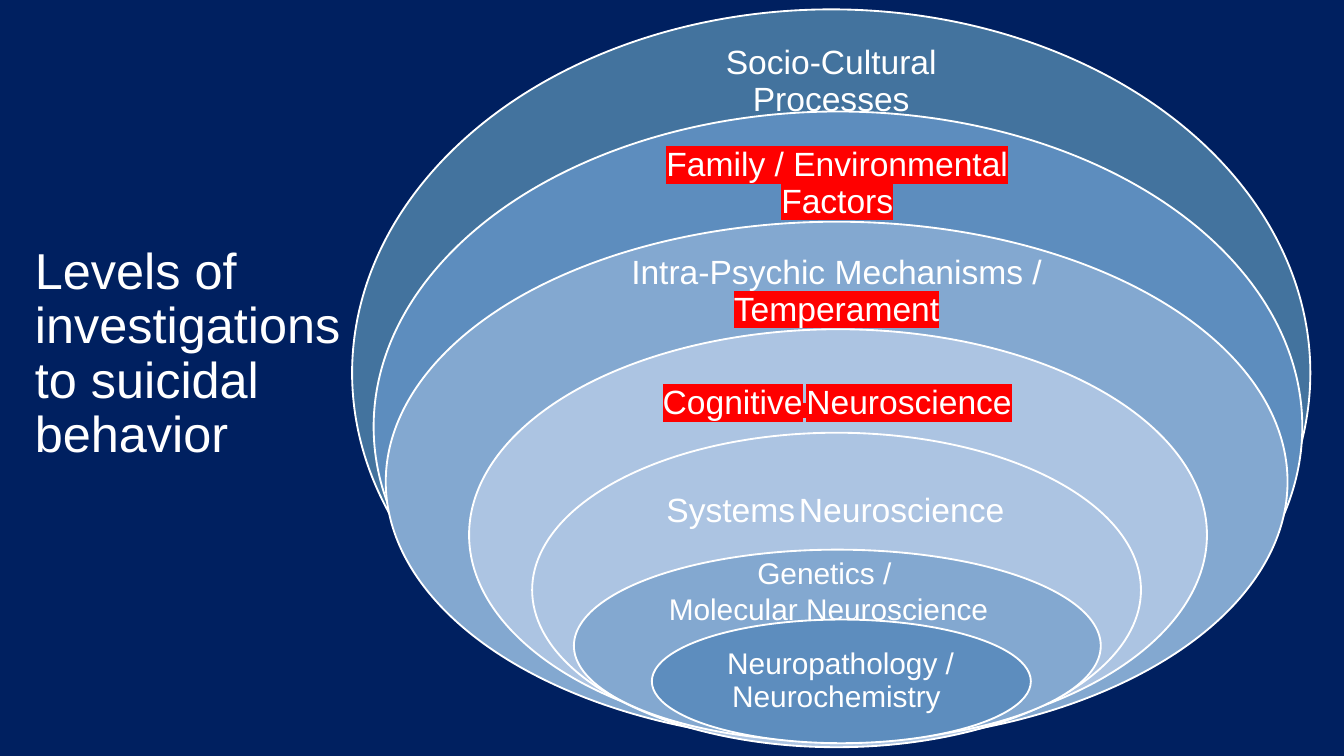
from dataclasses import dataclass

import lxml.etree
import pptx
import pptx.dml.color
import pptx.enum.shapes
import pptx.enum.text
import pptx.oxml.ns
import pptx.util

EMU_PER_PX = 4572  # 200 px to the inch
COLORS = {
    "background": "002060",
    "white": "FFFFFF",
    "highlight": "FF0000",
    "deep": "43739E",
    "strong": "5D8DBE",
    "medium": "83A8D0",
    "pale": "ACC4E2",
}
ANCHOR = pptx.enum.text.MSO_ANCHOR
ALIGN = pptx.enum.text.PP_ALIGN
Box = tuple[int, int, int, int]  # left, top, width, height


@dataclass(frozen=True)
class Span:
    text: str
    highlighted: bool = False
    size: int | None = None


@dataclass(frozen=True)
class Level:
    ellipse: Box
    color: str
    label: Box
    paragraphs: list[list[Span]]
    size: int = 18
    insets: Box = (28, 28, 28, 28)
    anchor: ANCHOR = ANCHOR.MIDDLE
    line_spacing: float = 0.9


GAP = Span(" ", size=7)
HIGHLIGHTED_GAP = Span(" ", highlighted=True, size=7)

# Levels from the outermost to the innermost
LEVELS = [
    Level((524, 14, 1426, 1082), "deep", (970, 68, 534, 108),
          [[Span("Socio-Cultural Processes")]]),
    Level((556, 166, 1382, 938), "strong", (948, 220, 596, 108),
          [[Span("Family / Environmental Factors", highlighted=True)]]),
    Level((574, 330, 1342, 774), "medium", (898, 382, 694, 106),
          [[Span("Intra-Psychic Mechanisms / "), Span("Temperament", highlighted=True)]]),
    Level((698, 490, 1098, 612), "pale", (950, 546, 592, 110),
          [[Span("Cognitive", highlighted=True), HIGHLIGHTED_GAP,
            Span("Neuroscience", highlighted=True)]]),
    Level((792, 644, 906, 468), "pale", (952, 702, 588, 118),
          [[Span("Systems"), GAP, Span("Neuroscience"), GAP]]),
    Level((854, 818, 784, 286), "medium", (978, 860, 534, 70),
          [[Span("Genetics / ")], [Span("Molecular Neuroscience")]],
          size=16, insets=(0, 0, 24, 140), anchor=ANCHOR.TOP, line_spacing=1.0),
    Level((970, 922, 564, 184), "strong", (1052, 968, 398, 92),
          [[Span("Neuropathology / Neurochemistry ")]],
          size=16, insets=(24, 24, 24, 24)),
]


def px(length: int) -> pptx.util.Emu:
    return pptx.util.Emu(length * EMU_PER_PX)


def rgb(name: str) -> pptx.dml.color.RGBColor:
    return pptx.dml.color.RGBColor.from_string(COLORS[name])


def highlight(run, color: str) -> None:
    """Put a highlight after the run's fill, where the schema expects it."""
    qn = pptx.oxml.ns.qn
    element = lxml.etree.Element(qn("a:highlight"))
    lxml.etree.SubElement(element, qn("a:srgbClr"), val=COLORS[color])
    run.font._element.find(qn("a:solidFill")).addnext(element)


def write_text(shape, paragraphs: list[list[Span]], *, size: int,
               align: ALIGN = ALIGN.CENTER, anchor: ANCHOR = ANCHOR.MIDDLE,
               insets: Box = (20, 10, 20, 10), line_spacing: float = 0.9,
               space_after: int = 0) -> None:
    frame = shape.text_frame
    frame.word_wrap = True
    frame.auto_size = pptx.enum.text.MSO_AUTO_SIZE.NONE
    frame.vertical_anchor = anchor
    (frame.margin_left, frame.margin_top,
     frame.margin_right, frame.margin_bottom) = map(px, insets)
    for index, spans in enumerate(paragraphs):
        paragraph = frame.add_paragraph() if index else frame.paragraphs[0]
        paragraph.alignment = align
        paragraph.line_spacing = line_spacing
        paragraph.space_before = pptx.util.Pt(0)
        paragraph.space_after = pptx.util.Pt(space_after)
        for span in spans:
            run = paragraph.add_run()
            run.text = span.text
            run.font.name = "Arial"
            run.font.size = pptx.util.Pt(span.size or size)
            run.font.color.rgb = rgb("white")
            if span.highlighted:
                highlight(run, "highlight")


def draw_level(slide, level: Level) -> None:
    ellipse = slide.shapes.add_shape(
        pptx.enum.shapes.MSO_SHAPE.OVAL, *map(px, level.ellipse))
    ellipse.shadow.inherit = False
    ellipse.fill.solid()
    ellipse.fill.fore_color.rgb = rgb(level.color)
    ellipse.line.color.rgb = rgb("white")
    ellipse.line.width = pptx.util.Pt(1)

    label = slide.shapes.add_textbox(*map(px, level.label))
    single = len(level.paragraphs) == 1
    write_text(label, level.paragraphs, size=level.size, anchor=level.anchor,
               insets=level.insets, line_spacing=level.line_spacing,
               space_after=round(level.size * 0.35) if single else 0)


def main() -> None:
    presentation = pptx.Presentation()
    presentation.slide_width, presentation.slide_height = px(2000), px(1125)
    slide = presentation.slides.add_slide(
        presentation.slide_layouts.get_by_name("Title Only"))
    slide.background.fill.solid()
    slide.background.fill.fore_color.rgb = rgb("background")

    # Title on the left
    title = slide.shapes.title
    title.left, title.top, title.width, title.height = map(px, (32, 262, 512, 532))
    write_text(title, [[Span("Levels of investigations to suicidal behavior")]],
               size=27, align=ALIGN.LEFT)

    # Nested ellipses
    for level in LEVELS:
        draw_level(slide, level)

    presentation.save("out.pptx")


if __name__ == "__main__":
    main()
